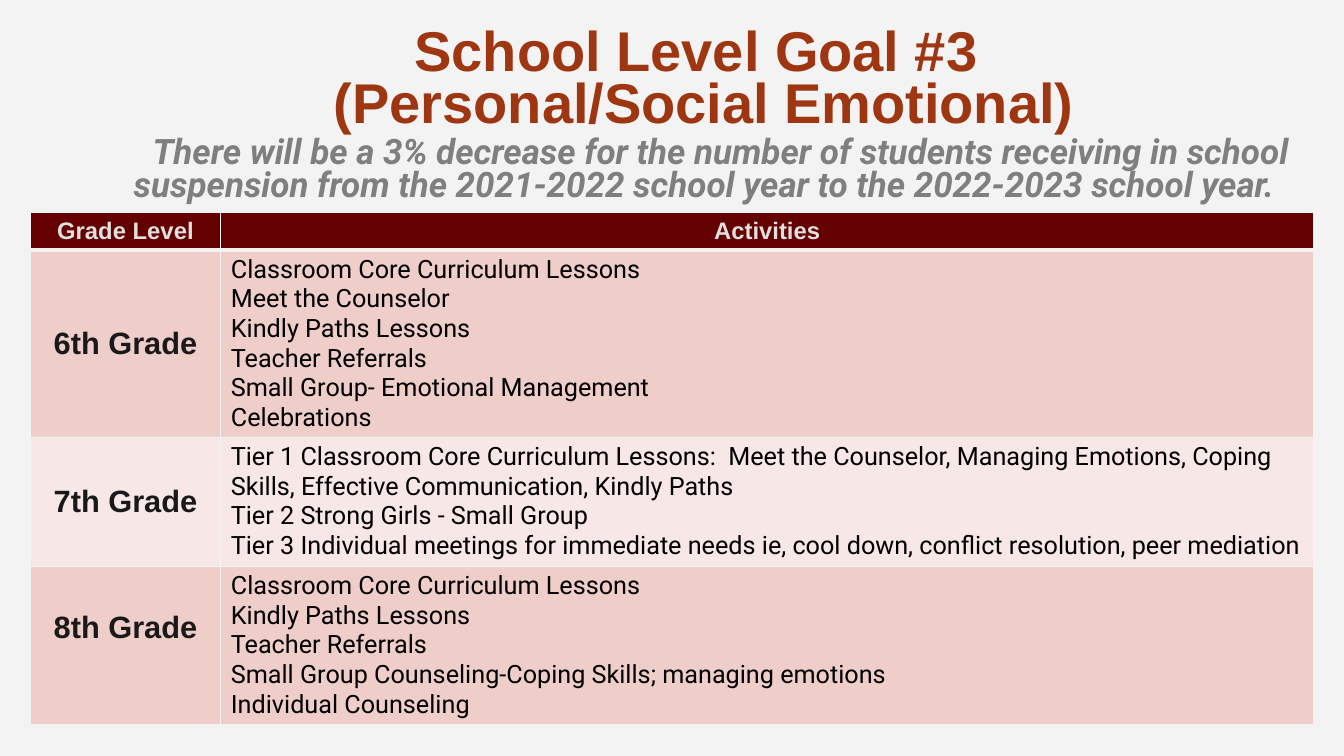
import pptx
import pptx.dml.color
import pptx.enum.text
import pptx.oxml
import pptx.oxml.ns
import pptx.util
from pptx.util import Inches

CENTER = pptx.enum.text.PP_ALIGN.CENTER
LEFT = pptx.enum.text.PP_ALIGN.LEFT
TOP = pptx.enum.text.MSO_ANCHOR.TOP
MIDDLE = pptx.enum.text.MSO_ANCHOR.MIDDLE
BACKGROUND = "F3F3F3"

GOAL = dict(size=40, name="Arial", color="9E3611", bold=True, italic=False)
TARGET = dict(size=25, name="Roboto", color="7F7F7F", bold=True, italic=True)
HEADER = dict(size=17, name="Arial", color="E1DFDF", bold=True)
GRADE = dict(size=22, name="Arial", color="191919", bold=True)
ACTIVITY = dict(size=18, name="Roboto", color="000000", bold=False)

HEADING = [
    ("School Level Goal #3 ", GOAL, 0, 0),
    ("(Personal/Social Emotional)", GOAL, 0, 0),
    ("There will be a 3% decrease for the number of students receiving in school "
     "suspension from the 2021-2022 school year to the 2022-2023 school year.", TARGET, 4, 0.33),
]
COLUMN_WIDTHS = [1.89, 10.84]
PLAN = [
    ("Grade Level", ["Activities"], 0.37, "640000"),
    ("6th Grade", [
        "Classroom Core Curriculum Lessons",
        "Meet the Counselor",
        "Kindly Paths Lessons",
        "Teacher Referrals",
        "Small Group- Emotional Management",
        "Celebrations",
    ], 1.85, "EFCECA"),
    ("7th Grade", [
        "Tier 1 Classroom Core Curriculum Lessons:  Meet the Counselor, Managing Emotions, "
        "Coping Skills, Effective Communication, Kindly Paths",
        "Tier 2 Strong Girls - Small Group",
        "Tier 3 Individual meetings for immediate needs ie, cool down, conflict resolution, "
        "peer mediation",
    ], 1.28, "F7E8E7"),
    ("8th Grade", [
        "Classroom Core Curriculum Lessons",
        "Kindly Paths Lessons",
        "Teacher Referrals",
        "Small Group Counseling-Coping Skills; managing emotions",
        "Individual Counseling",
    ], 1.56, "EFCECA"),
]


def rgb(color):
    """Turn a hex string into a colour."""
    return pptx.dml.color.RGBColor.from_string(color)


def write(paragraph, text, style, alignment):
    """Put styled text into a paragraph."""
    paragraph.alignment = alignment
    run = paragraph.add_run()
    run.text = text
    for key, value in style.items():
        if key == "color":
            run.font.color.rgb = rgb(value)
        else:
            setattr(run.font, key, pptx.util.Pt(value) if key == "size" else value)


def fill_cell(cell, lines, style, alignment, anchor, color):
    """Write one paragraph per line in a filled table cell."""
    cell.fill.solid()
    cell.fill.fore_color.rgb = rgb(color)
    cell.vertical_anchor = anchor
    frame = cell.text_frame
    for index, line in enumerate(lines):
        paragraph = frame.add_paragraph() if index else frame.paragraphs[0]
        write(paragraph, line, style, alignment)


def outline_cell(cell, top, bottom):
    """Draw the four borders of a cell, with widths in points for top and bottom."""
    borders = dict(lnL=1, lnR=1, lnT=top, lnB=bottom)
    for index, (side, width) in enumerate(borders.items()):
        border = pptx.oxml.parse_xml(
            f'<a:{side} {pptx.oxml.ns.nsdecls("a")} w="{pptx.util.Pt(width)}">'
            f'<a:solidFill><a:srgbClr val="{BACKGROUND}"/></a:solidFill></a:{side}>')
        cell._tc.get_or_add_tcPr().insert(index, border)


def add_heading(body, left, top, width, height):
    """Place the goal and its target in the body placeholder."""
    box = dict(left=left, top=top, width=width, height=height)
    for key, value in box.items():
        setattr(body, key, Inches(value))
    frame = body.text_frame
    layout = dict(margin_left=0, margin_right=0, vertical_anchor=MIDDLE, word_wrap=True,
                  auto_size=pptx.enum.text.MSO_AUTO_SIZE.NONE)
    for key, value in layout.items():
        setattr(frame, key, value)
    for index, (text, style, gap, indent) in enumerate(HEADING):
        paragraph = frame.add_paragraph() if index else frame.paragraphs[0]
        write(paragraph, text, style, CENTER)
        paragraph.line_spacing = 0.77
        paragraph.space_before = pptx.util.Pt(gap)
        properties = paragraph._p.get_or_add_pPr()
        properties.set("marL", "0")
        properties.set("indent", str(Inches(indent)))
        properties.append(pptx.oxml.parse_xml(f'<a:buNone {pptx.oxml.ns.nsdecls("a")}/>'))


def add_plan(slide, left, top):
    """Place the table of activities for each grade."""
    height = sum(row[2] for row in PLAN)
    plan = slide.shapes.add_table(
        len(PLAN), len(COLUMN_WIDTHS), Inches(left), Inches(top),
        Inches(sum(COLUMN_WIDTHS)), Inches(height)).table
    for column, width in zip(plan.columns, COLUMN_WIDTHS):
        column.width = Inches(width)
    for index, (grade, activities, row_height, color) in enumerate(PLAN):
        plan.rows[index].height = Inches(row_height)
        grade_cell, activity_cell = plan.cell(index, 0), plan.cell(index, 1)
        if index == 0:
            fill_cell(grade_cell, [grade], HEADER, CENTER, TOP, color)
            fill_cell(activity_cell, activities, HEADER, CENTER, TOP, color)
        else:
            fill_cell(grade_cell, [grade], GRADE, CENTER, MIDDLE, color)
            fill_cell(activity_cell, activities, ACTIVITY, LEFT, TOP, color)
        for cell in (grade_cell, activity_cell):
            outline_cell(cell, 3 if index == 1 else 1, 3 if index == 0 else 1)
    plan.cell(len(PLAN) - 1, 0).margin_bottom = Inches(0.4)


def main():
    """Build the slide and save it."""
    deck = pptx.Presentation()
    deck.slide_width, deck.slide_height = Inches(13.33), Inches(7.5)
    slide = deck.slides.add_slide(deck.slide_layouts[1])
    slide.background.fill.solid()
    slide.background.fill.fore_color.rgb = rgb(BACKGROUND)
    title = slide.shapes.title.element
    title.getparent().remove(title)
    add_heading(slide.placeholders[1], 1.05, 0.06, 11.86, 2.2)
    add_plan(slide, 0.3, 2.11)
    deck.save("out.pptx")


if __name__ == "__main__":
    main()
